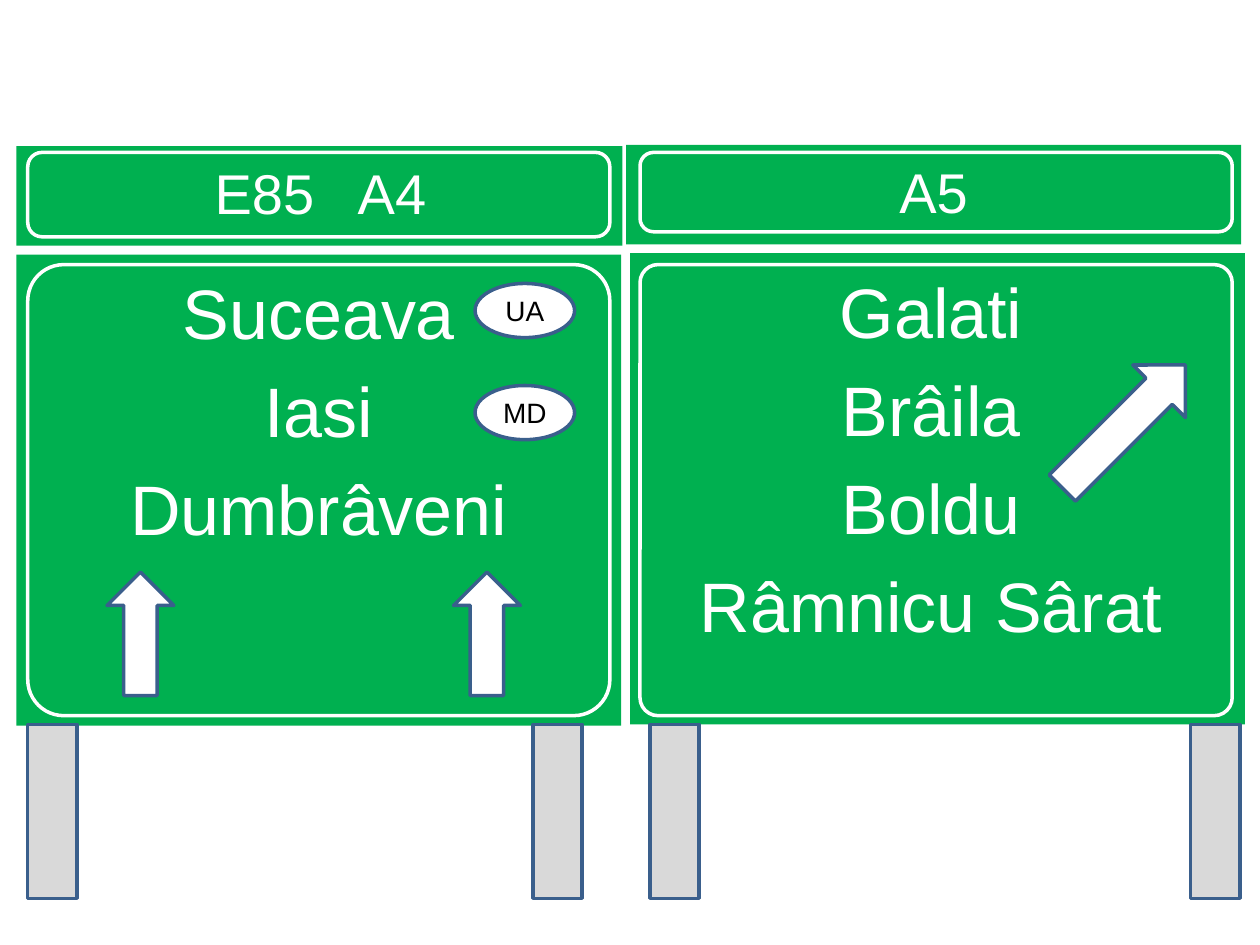
from pptx import Presentation
from pptx.dml.color import RGBColor
from pptx.enum.shapes import MSO_SHAPE
from pptx.enum.text import MSO_ANCHOR, MSO_AUTO_SIZE, PP_ALIGN
from pptx.util import Inches, Pt

GREEN = RGBColor(0x00, 0xB0, 0x50)
WHITE = RGBColor(0xFF, 0xFF, 0xFF)
BLACK = RGBColor(0x00, 0x00, 0x00)
GRAY = RGBColor(0xD9, 0xD9, 0xD9)
BLUE = RGBColor(0x3A, 0x5F, 0x8C)


def add_outlined_shape(kind, left, top, width, height, fill=WHITE, line=BLUE):
    shape = slide.shapes.add_shape(
        kind, Inches(left), Inches(top), Inches(width), Inches(height))
    shape.shadow.inherit = False
    if fill is None:
        shape.fill.background()
    else:
        shape.fill.solid()
        shape.fill.fore_color.rgb = fill
    shape.line.color.rgb = line
    shape.line.width = Pt(2)
    return shape


def write_centered(paragraph, text, size, color):
    paragraph.alignment = PP_ALIGN.CENTER
    run = paragraph.add_run()
    run.text = text
    run.font.name = "Arial"
    run.font.size = Pt(size)
    run.font.bold = False
    run.font.color.rgb = color


presentation = Presentation()
presentation.slide_width = Inches(10)
presentation.slide_height = Inches(7.5)
slide = presentation.slides.add_slide(presentation.slide_layouts[4])
title = slide.shapes.title
title.element.getparent().remove(title.element)

# Green panels: placeholder, position, insets (left, top, right, bottom), anchor, size, lines
panels = [
    (1, (0.13, 1.16, 4.81, 0.79), (0.12, 0.12, 0.1, 0.16), MSO_ANCHOR.BOTTOM, 32,
     ["E85   A4"]),
    (2, (0.13, 2.02, 4.8, 3.74), (0.1, 0.12, 0.1, 0.05), MSO_ANCHOR.TOP, 40,
     ["Suceava", "Iasi", "Dumbrâveni"]),
    (3, (4.97, 1.15, 4.88, 0.79), (0.1, 0.05, 0.1, 0.16), MSO_ANCHOR.BOTTOM, 32,
     ["A5"]),
    (4, (5, 2.01, 4.88, 3.74), (0, 0.12, 0.1, 0.05), MSO_ANCHOR.TOP, 40,
     ["Galati", "Brâila", "Boldu", "Râmnicu Sârat"]),
]
placeholders = {shape.placeholder_format.idx: shape for shape in slide.placeholders}
for index, position, insets, anchor, size, lines in panels:
    panel = placeholders[index]
    panel.left, panel.top, panel.width, panel.height = map(Inches, position)
    panel.fill.solid()
    panel.fill.fore_color.rgb = GREEN
    frame = panel.text_frame
    frame.auto_size = MSO_AUTO_SIZE.NONE
    frame.word_wrap = True
    frame.vertical_anchor = anchor
    (frame.margin_left, frame.margin_top,
     frame.margin_right, frame.margin_bottom) = map(Inches, insets)
    for number, line in enumerate(lines):
        paragraph = frame.add_paragraph() if number else frame.paragraphs[0]
        properties = paragraph._p.get_or_add_pPr()
        properties.set("marL", "0")
        properties.set("indent", "0")
        if size == 40:
            properties.insert_element_before(
                properties.makeelement(
                    "{http://schemas.openxmlformats.org/drawingml/2006/main}buNone", {}),
                "a:tabLst", "a:defRPr", "a:extLst")
        write_centered(paragraph, line, size, WHITE)

# Posts and arrows
for left in (0.22, 4.23, 5.16, 9.45):
    add_outlined_shape(MSO_SHAPE.RECTANGLE, left, 5.75, 0.39, 1.38, fill=GRAY)
for left in (0.85, 3.6):
    add_outlined_shape(MSO_SHAPE.UP_ARROW, left, 4.54, 0.53, 0.98)
exit_arrow = add_outlined_shape(MSO_SHAPE.RIGHT_ARROW, 8.23, 3.09, 1.38, 0.59)
exit_arrow.rotation = 315

# Country ovals
for top, country in ((2.25, "UA"), (3.06, "MD")):
    oval = add_outlined_shape(MSO_SHAPE.OVAL, 3.77, top, 0.79, 0.43)
    oval.text_frame.vertical_anchor = MSO_ANCHOR.MIDDLE
    write_centered(oval.text_frame.paragraphs[0], country, 16, BLACK)

# White borders inside the panels
for left, top, width, height, rounding in (
        (0.22, 1.21, 4.62, 0.67, 0.17), (5.08, 1.21, 4.7, 0.63, 0.17),
        (0.22, 2.1, 4.62, 3.58, 0.08), (5.08, 2.1, 4.7, 3.58, 0.04)):
    border = add_outlined_shape(
        MSO_SHAPE.ROUNDED_RECTANGLE, left, top, width, height, fill=None, line=WHITE)
    border.adjustments[0] = rounding

presentation.save("out.pptx")
